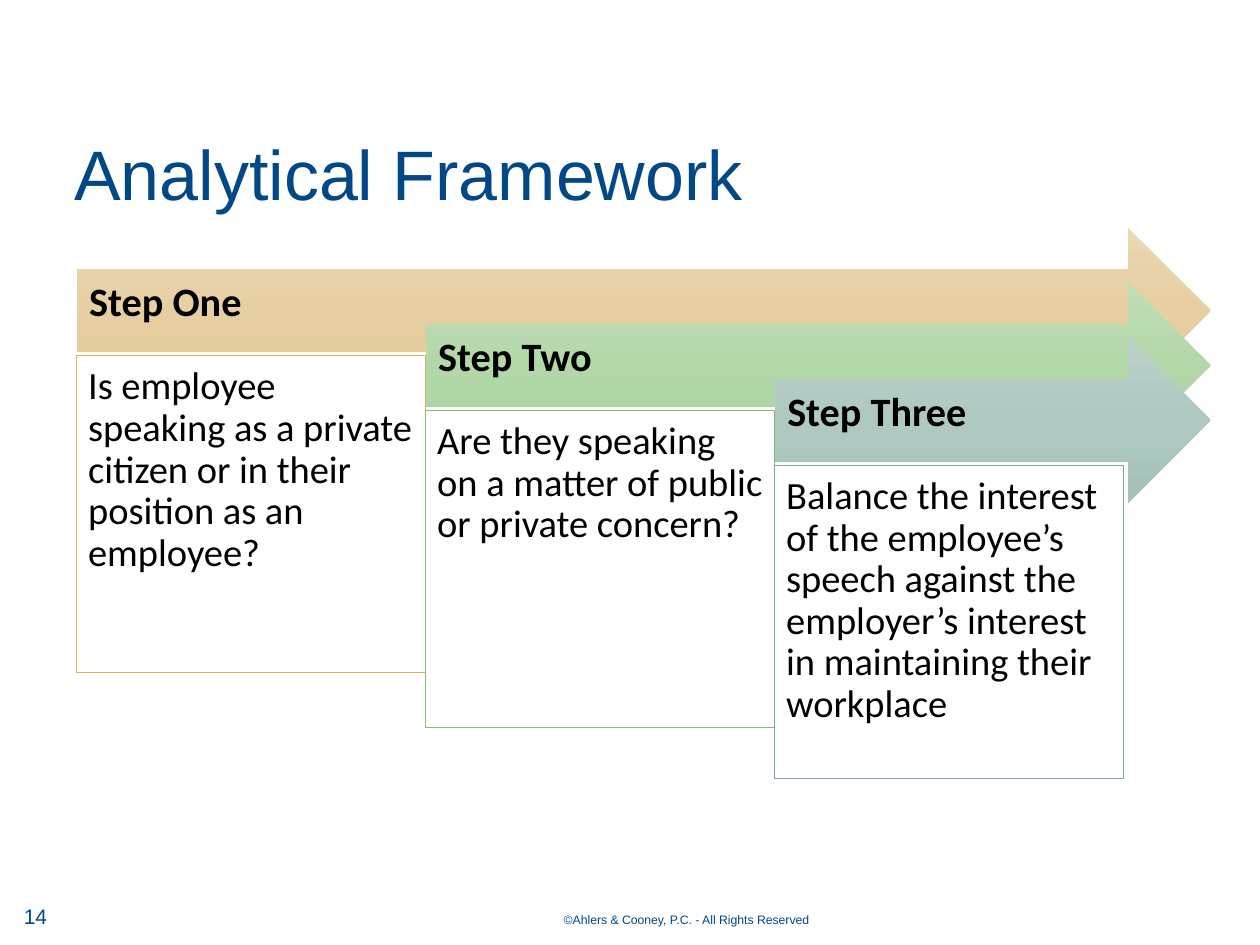
from copy import deepcopy

from pptx import Presentation
from pptx import util as u
from pptx.dml import color
from pptx.enum import shapes, text
from pptx.oxml import ns

HUES = {"navy": "024886", "black": "000000", "white": "FFFFFF"}
STEPS = [
    {"head": "Step One", "line": "D8B25C", "fade": ["EBD7B2", "E7CFA4", "E6C993"], "deep": 2.52,
     "body": "Is employee speaking as a private citizen or in their position as an employee?"},
    {"head": "Step Two", "line": "81C06B", "fade": ["BFDEB6", "B4D7A9", "A8D49B"], "deep": 2.52,
     "body": "Are they speaking on a matter of public or private concern?"},
    {"head": "Step Three", "line": "7BA79D", "fade": ["BCD0CC", "B0C8C2", "A4C1BA"], "deep": 2.49,
     "body": "Balance the interest of the employee’s speech against the employer’s "
             "interest in maintaining their workplace"},
]
SIDES = ("margin_left", "margin_top", "margin_right", "margin_bottom")
MID, TOP = text.MSO_ANCHOR.MIDDLE, text.MSO_ANCHOR.TOP
LEFT, RIGHT = text.PP_ALIGN.LEFT, text.PP_ALIGN.RIGHT


def rgb(code):
    return color.RGBColor.from_string(code)


def apply(item, form):
    for name, value in form.items():
        setattr(item, name, value)


def write(shape, words, hue, font, anchor=TOP, pads=(0.1, 0.05, 0.1, 0.05), align=LEFT, pitch=1.0):
    frame = shape.text_frame
    apply(frame, {"word_wrap": True, "vertical_anchor": anchor})
    apply(frame, {side: u.Inches(pad) for side, pad in zip(SIDES, pads)})
    para = frame.paragraphs[0]
    apply(para, {"text": words, "alignment": align, "line_spacing": pitch})
    apply(para.font, font)
    para.font.color.rgb = rgb(HUES[hue])


def label(slide, box, words, font, **form):
    shape = slide.shapes.add_textbox(*map(u.Inches, box))
    write(shape, words, "navy", font, **form)


def fade(shape, codes):
    shape.fill.gradient()
    shape.fill.gradient_angle = 270
    stops = shape._element.spPr.find(".//" + ns.qn("a:gsLst"))
    stops.insert(1, deepcopy(stops[0]))
    for stop, code, place in zip(shape.fill.gradient_stops, codes, (0, 0.5, 1)):
        stop.color.rgb = rgb(code)
        stop.position = place


def step(slide, box, data, wide):
    left, top, width, height = box
    arrow = slide.shapes.add_shape(shapes.MSO_SHAPE.RIGHT_ARROW, *map(u.Inches, box))
    arrow.shadow.inherit = False
    fade(arrow, data["fade"])
    arrow.line.fill.background()
    write(arrow, data["head"], "black", {"name": "Calibri", "size": u.Pt(23), "bold": True},
          anchor=MID, pads=(0.1, 0.1, 0.28, 0.21), pitch=0.9)
    area = (left, top + 1.01, wide, data["deep"])
    card = slide.shapes.add_shape(shapes.MSO_SHAPE.RECTANGLE, *map(u.Inches, area))
    card.shadow.inherit = False
    card.fill.solid()
    card.fill.fore_color.rgb = rgb(HUES["white"])
    card.line.color.rgb = rgb(data["line"])
    card.line.width = u.Pt(0.5)
    write(card, data["body"], "black", {"name": "Calibri", "size": u.Pt(22)},
          pads=(0.09,) * 4, pitch=0.9)


def flow(slide, box):
    left, top, width, height = box
    wide, drop = 2.77, 0.435
    for i, data in enumerate(STEPS):
        place = (left + i * wide, top + i * drop, width - i * wide, height)
        step(slide, place, data, wide)


def footer(slide, box):
    left, top, width, height = box
    label(slide, (left, top, 2.25, height), "14", {"name": "Arial", "size": u.Pt(12)}, anchor=MID)
    label(slide, (left + 3.78, top + 0.12, 2.65, 0.3), "©Ahlers & Cooney, P.C. - All Rights Reserved",
          {"name": "Arial", "size": u.Pt(7)}, align=RIGHT)


def main():
    deck = Presentation()
    apply(deck, {"slide_width": u.Inches(10), "slide_height": u.Inches(7.5)})
    slide = deck.slides.add_slide(deck.slide_layouts[6])
    footer(slide, (0.09, 7.07, 6.43, 0.4))
    flow(slide, (0.61, 1.81, 9, 1.31))
    label(slide, (0.49, 0.86, 9.24, 1.1), "Analytical Framework",
          {"name": "Arial", "size": u.Pt(40)}, anchor=MID, pitch=0.9)
    deck.save("out.pptx")


if __name__ == "__main__":
    main()
